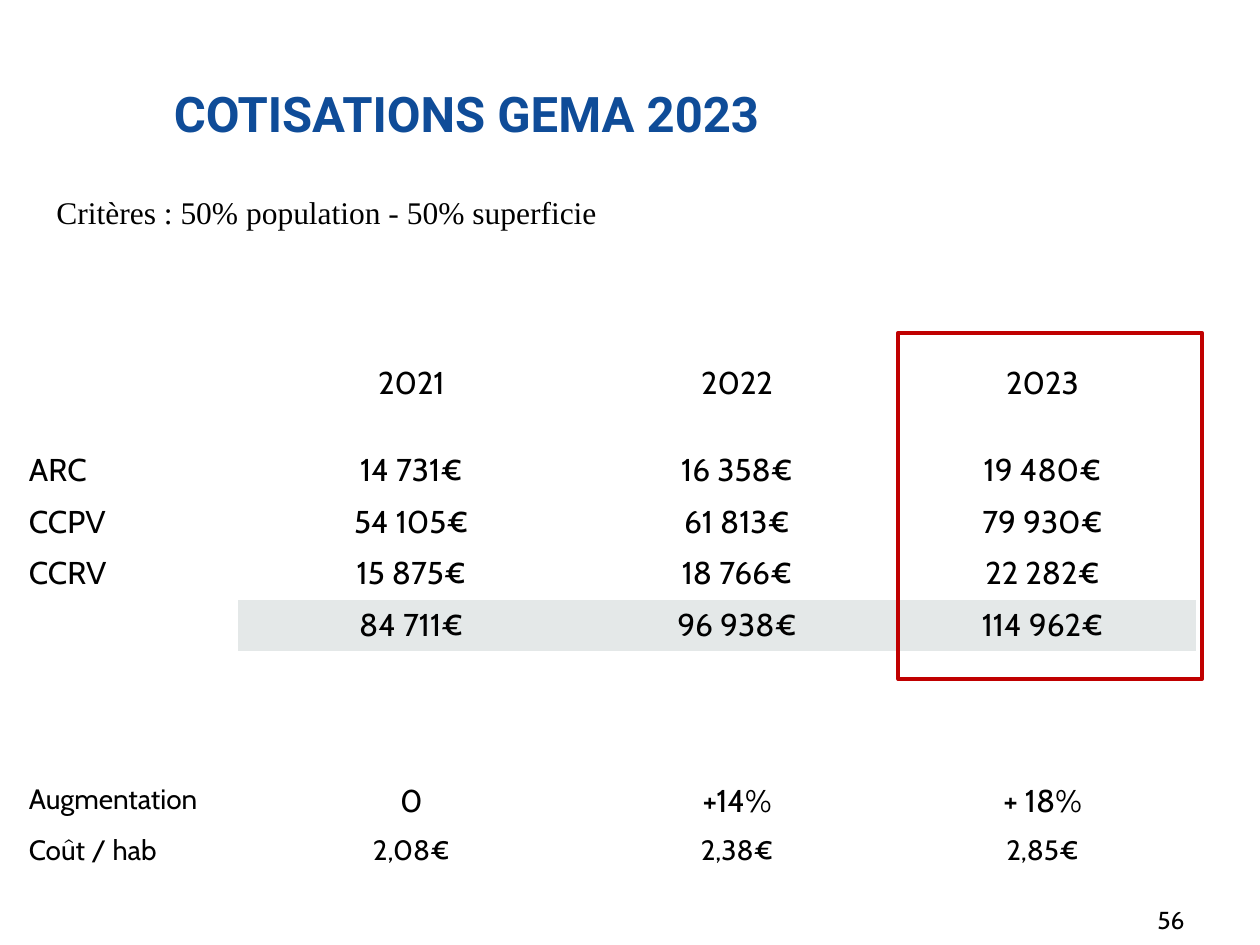
from pptx import Presentation
from pptx.dml.color import RGBColor
from pptx.enum.shapes import MSO_SHAPE
from pptx.enum.text import MSO_ANCHOR, MSO_AUTO_SIZE, PP_ALIGN
from pptx.util import Inches, Pt

BLUE = RGBColor(0x0F, 0x4C, 0x98)
BLACK = RGBColor(0, 0, 0)
GREY = RGBColor(0xE4, 0xE8, 0xE8)
RED = RGBColor(0xC0, 0, 0)

# Content
TITLE = "COTISATIONS GEMA 2023"
RULE = "Critères : 50% population - 50% superficie"
PAGE = "56"
NO_GRID = "{2D5ABB26-0587-4C30-8999-92F81FD0307C}"
COLS = [1.76, 2.75, 2.42, 2.43]
TOTAL = 4  # shaded row
# Row height, text size, cells
ROWS = [
    (0.69, 18, ["", "2021", "2022", "2023"]),
    (0.41, 18, ["ARC", "14 731€", "16 358€", "19 480€"]),
    (0.41, 18, ["CCPV", "54 105€", "61 813€", "79 930€"]),
    (0.41, 18, ["CCRV", "15 875€", "18 766€", "22 282€"]),
    (0.41, 18, ["", "84 711€", "96 938€", "114 962€"]),
    (0.99, 18, [""] * 4),
    (0.41, 18, ["Augmentation", "0", "+14%", "+ 18%"]),
    (0.41, 16, ["Coût / hab", "2,08€", "2,38€", "2,85€"]),
    (0.41, 18, [""] * 4),
]


def style(para, size, face, color=BLACK, align=PP_ALIGN.LEFT, bold=False):
    para.alignment = align
    font = para.font
    font.size, font.name, font.bold = Pt(size), face, bold
    font.color.rgb = color


def add_text(slide, box, text, size, face, align, anchor):
    frame = slide.shapes.add_textbox(*map(Inches, box)).text_frame
    frame.word_wrap = True
    frame.vertical_anchor = anchor
    frame.text = text
    style(frame.paragraphs[0], size, face, align=align)
    return frame


def add_grid(slide):
    high = sum(row[0] for row in ROWS)
    frame = slide.shapes.add_table(len(ROWS), len(COLS), Inches(0.13), Inches(2.84),
                                   Inches(sum(COLS)), Inches(high))
    table = frame.table
    table.first_row = table.horz_banding = False
    table._tbl.tblPr[0].text = NO_GRID
    for col, width in zip(table.columns, COLS):
        col.width = Inches(width)
    for r, (height, size, cells) in enumerate(ROWS):
        table.rows[r].height = Inches(height)
        for c, text in enumerate(cells):
            cell = table.cell(r, c)
            cell.text = text
            label = c == 0
            small = label and text == "Augmentation"
            style(cell.text_frame.paragraphs[0], 16 if small else size, "Cabin",
                  align=PP_ALIGN.LEFT if label else PP_ALIGN.CENTER)
            if r == TOTAL and not label:
                cell.fill.solid()
                cell.fill.fore_color.rgb = GREY
            else:
                cell.fill.background()


def main():
    deck = Presentation()
    deck.slide_width, deck.slide_height = Inches(10), Inches(7.5)
    slide = deck.slides.add_slide(deck.slide_layouts[5])

    # Title
    title = slide.shapes.title
    title.left, title.top = Inches(1.28), Inches(0.74)
    title.width, title.height = Inches(8.62), Inches(0.31)
    frame = title.text_frame
    frame.text = TITLE
    frame.auto_size = MSO_AUTO_SIZE.NONE
    frame.vertical_anchor = MSO_ANCHOR.MIDDLE
    style(frame.paragraphs[0], 28, "Roboto", BLUE, bold=True)

    # Page number and criteria
    add_text(slide, (7.17, 7.1, 2.33, 0.4), PAGE, 14, "Cabin",
             PP_ALIGN.RIGHT, MSO_ANCHOR.MIDDLE)
    rule = add_text(slide, (0.35, 1.48, 5.07, 0.4), RULE, 18, "Times New Roman",
                    PP_ALIGN.LEFT, MSO_ANCHOR.TOP)
    rule.auto_size = MSO_AUTO_SIZE.SHAPE_TO_FIT_TEXT

    # Table
    add_grid(slide)

    # Frame around 2023
    mark = slide.shapes.add_shape(MSO_SHAPE.RECTANGLE, Inches(7.13), Inches(2.64),
                                  Inches(2.41), Inches(2.75))
    mark.shadow.inherit = False
    mark.fill.background()
    mark.line.color.rgb = RED
    mark.line.width = Pt(2.25)

    deck.save("out.pptx")


if __name__ == "__main__":
    main()
